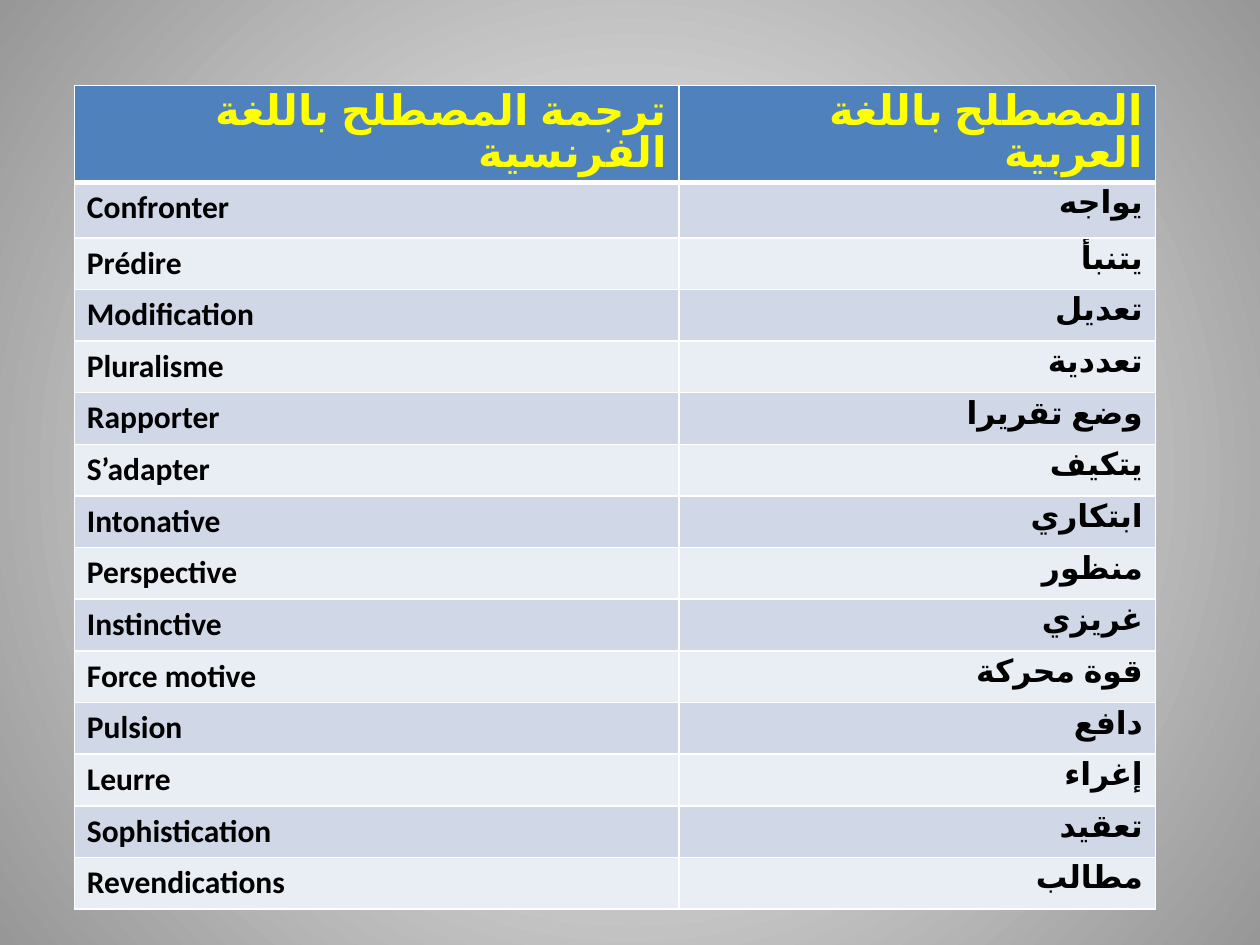
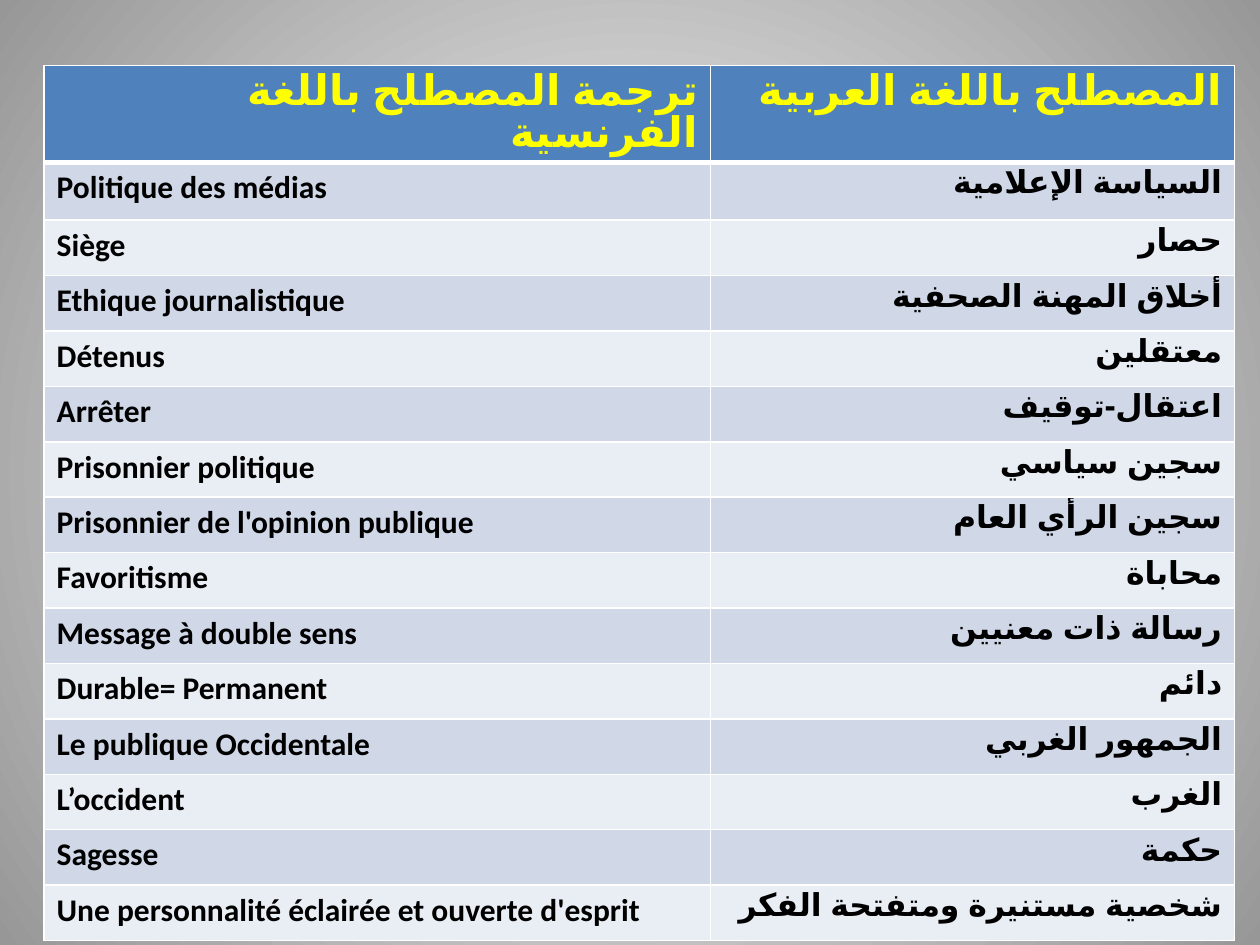
from pptx import Presentation
from pptx.dml.color import RGBColor
from pptx.enum.lang import MSO_LANGUAGE_ID as Language
from pptx.enum.text import PP_ALIGN as Align
from pptx.oxml import parse_xml
from pptx.oxml.ns import nsdecls, qn
from pptx.util import Inches, Pt

FONT = "Calibri"
HEADER_FILL, HEADER_TEXT, BODY_TEXT = "4F81BD", "FFFF00", "000000"
RULE_COLOR, RULE_WIDTH = "FFFFFF", 3
BANDS = ("D0D8E8", "E9EDF4")
GLOW = (("FFFFFF", 0), ("979797", 1))
HEADINGS = ("ترجمة المصطلح باللغة الفرنسية", "المصطلح باللغة العربية")

GLOSSARIES = [
    {
        "corner": (0.59, 0.68),
        "columns": (4.8, 3.78),
        "heights": {"header": 0.51, "first": 0.44, "other": 0.41},
        "terms": [
            ("Confronter", "يواجه"),
            ("Prédire", "يتنبأ"),
            ("Modification", "تعديل"),
            ("Pluralisme", "تعددية"),
            ("Rapporter", "وضع تقريرا"),
            ("S’adapter", "يتكيف"),
            ("Intonative", "ابتكاري"),
            ("Perspective", "منظور"),
            ("Instinctive", "غريزي"),
            ("Force motive", "قوة محركة"),
            ("Pulsion", "دافع"),
            ("Leurre", "إغراء"),
            ("Sophistication", "تعقيد"),
            ("Revendications", "مطالب"),
        ],
    },
    {
        "corner": (0.35, 0.52),
        "columns": (5.29, 4.16),
        "heights": {"header": 0.55, "first": 0.46, "other": 0.44},
        "terms": [
            ("Politique des médias", "السياسة الإعلامية"),
            ("Siège", "حصار"),
            ("Ethique journalistique", "أخلاق المهنة الصحفية"),
            ("Détenus", "معتقلين"),
            ("Arrêter", "اعتقال-توقيف"),
            ("Prisonnier politique", "سجين سياسي"),
            ("Prisonnier de l'opinion publique", "سجين الرأي العام"),
            ("Favoritisme", "محاباة"),
            ("Message à double sens", "رسالة ذات معنيين"),
            ("Durable= Permanent", "دائم"),
            ("Le publique Occidentale", "الجمهور الغربي"),
            ("L’occident", "الغرب"),
            ("Sagesse", "حكمة"),
            ("Une personnalité éclairée et ouverte d'esprit", "شخصية مستنيرة ومتفتحة الفكر"),
        ],
    },
]


def color(value):
    """Turn a hex string into a colour."""
    return RGBColor.from_string(value)


def paint_background(master):
    """Give every slide the round grey gradient."""
    fill = master.background.fill
    fill.gradient()
    for stop, (shade, position) in zip(fill.gradient_stops, GLOW):
        stop.color.rgb = color(shade)
        stop.position = position
    line = next(master.element.cSld.iter(qn("a:lin")))
    circle = parse_xml(
        f'<a:path {nsdecls("a")} path="circle">'
        '<a:fillToRect l="50000" t="50000" r="50000" b="50000"/></a:path>'
    )
    line.getparent().replace(line, circle)


def write_cell(cell, text, fill, ink, size, arabic):
    """Fill one cell with a bold term, Arabic running right to left."""
    cell.fill.solid()
    cell.fill.fore_color.rgb = color(fill)
    para = cell.text_frame.paragraphs[0]
    para.text = text
    font = para.runs[0].font
    font.name, font.size, font.bold = FONT, Pt(size), True
    font.color.rgb = color(ink)
    font.language_id = Language.FRENCH
    if arabic:
        para.alignment = Align.RIGHT
        para._p.get_or_add_pPr().set("rtl", "1")
        font.language_id = Language.ARABIC_ALGERIA


def underline_cell(cell):
    """Draw the thick rule below a heading."""
    rule = parse_xml(
        f'<a:lnB {nsdecls("a")} w="{Pt(RULE_WIDTH)}"><a:solidFill>'
        f'<a:srgbClr val="{RULE_COLOR}"/></a:solidFill></a:lnB>'
    )
    cell._tc.get_or_add_tcPr().insert(0, rule)


def add_glossary(page, corner, columns, heights, terms):
    """Draw one table of French terms beside their Arabic sources."""
    row_heights = [heights["header"], heights["first"]]
    row_heights += [heights["other"]] * (len(terms) - 1)
    left, top = map(Inches, corner)
    table = page.shapes.add_table(
        len(row_heights), len(columns), left, top,
        Inches(sum(columns)), Inches(sum(row_heights)),
    ).table
    for column, width in zip(table.columns, columns):
        column.width = Inches(width)
    for row, height in zip(table.rows, row_heights):
        row.height = Inches(height)
    for index, heading in enumerate(HEADINGS):
        cell = table.cell(0, index)
        write_cell(cell, heading, HEADER_FILL, HEADER_TEXT, 24, True)
        underline_cell(cell)
    for number, pair in enumerate(terms):
        for index, term in enumerate(pair):
            write_cell(table.cell(number + 1, index), term, BANDS[number % 2],
                       BODY_TEXT, 18, index == 1)


def main():
    """Build the two glossary slides."""
    deck = Presentation()
    deck.slide_width, deck.slide_height = Inches(10), Inches(7.5)
    paint_background(deck.slide_master)
    for glossary in GLOSSARIES:
        page = deck.slides.add_slide(deck.slide_layouts[6])
        add_glossary(page, **glossary)
    deck.save("out.pptx")


if __name__ == "__main__":
    main()
